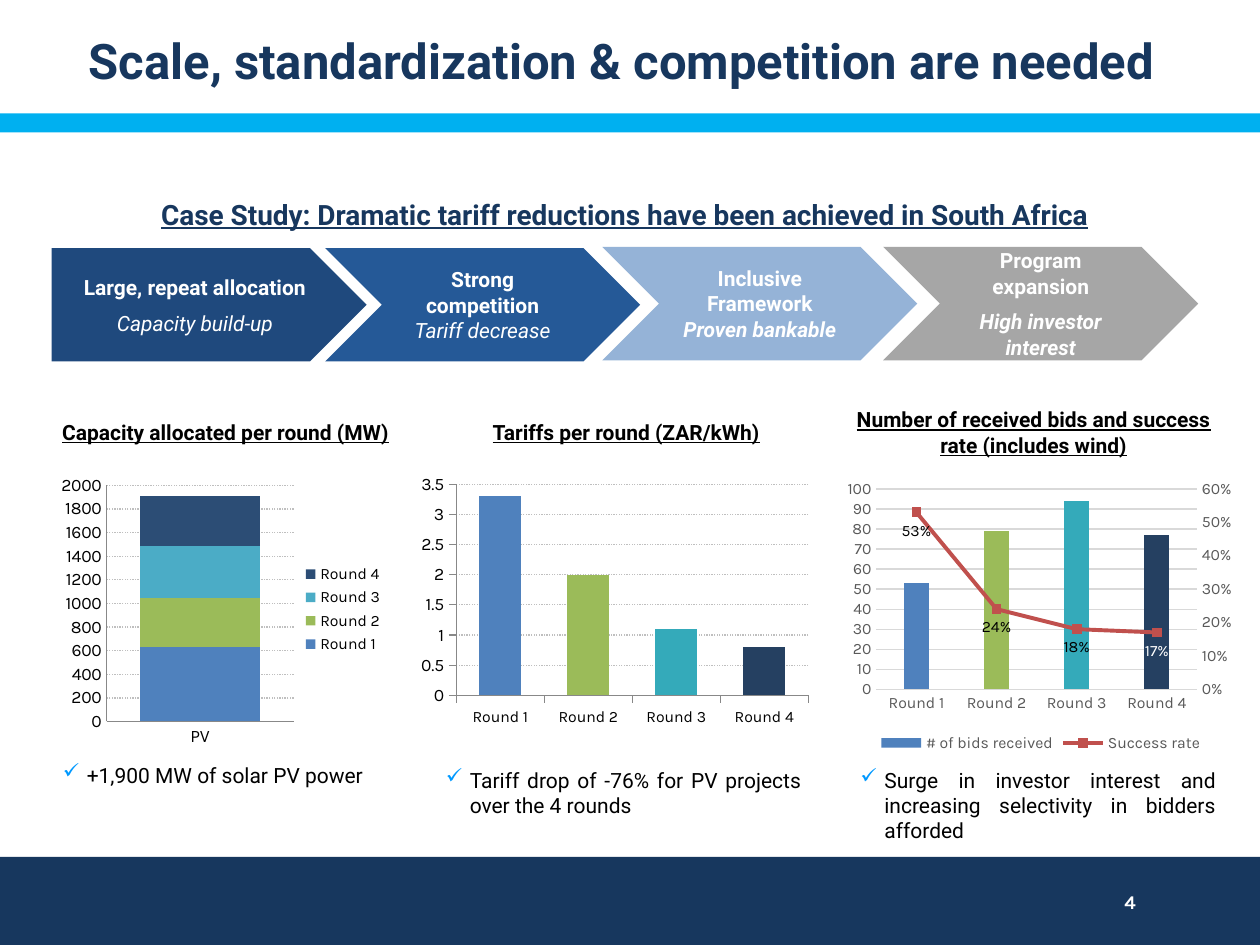
from copy import deepcopy
from pptx import Presentation
from pptx.chart.axis import CategoryAxis, ValueAxis
from pptx.chart.data import CategoryChartData
from pptx.dml.color import RGBColor
from pptx.enum.chart import XL_CHART_TYPE, XL_LABEL_POSITION, XL_LEGEND_POSITION, XL_MARKER_STYLE, XL_TICK_MARK
from pptx.enum.dml import MSO_LINE
from pptx.enum.shapes import MSO_SHAPE
from pptx.enum.text import MSO_ANCHOR, PP_ALIGN
from pptx.oxml import parse_xml
from pptx.oxml.ns import nsdecls, qn
from pptx.util import Pt

COLORS = {
    "navy": "17375E", "sky": "00B0F0", "white": "FFFFFF", "black": "000000", "check": "0099FF",
    "axis": "888888", "dots": "BFBFBF", "pale": "D9D9D9", "gray": "595959", "blue": "4F81BD",
    "green": "9BBB59", "aqua": "4BACC6", "deep": "2C4D75", "teal": "34AABA", "dark": "254061",
    "red": "C0504D", "marker": "C00000", "step1": "1F497D", "step2": "255997", "step3": "95B3D7",
    "step4": "A6A6A6"}
ROUNDS = ["Round 1", "Round 2", "Round 3", "Round 4"]

def style_font(font, size, color, name="Roboto", bold=False, italic=False, underline=False):
    """Format a font."""
    font.name, font.size, font.color.rgb = name, Pt(size), RGBColor.from_string(COLORS[color])
    font.bold, font.italic, font.underline = bold, italic, underline

def fill_solid(fill, color):
    """Give a fill one colour."""
    fill.solid()
    fill.fore_color.rgb = RGBColor.from_string(COLORS[color])

def style_line(line, color, width=0.75):
    """Give a line a colour and width."""
    fill_solid(line.fill, color)
    line.width = Pt(width)

def add_run(paragraph, text, size, color, align=PP_ALIGN.CENTER, **style):
    """Append one formatted run to an aligned paragraph."""
    paragraph.alignment = align
    run = paragraph.add_run()
    run.text = text
    style_font(run.font, size, color, **style)

def add_label(slide, box, text, size, color, anchor=MSO_ANCHOR.TOP, **style):
    """Place one centred text in the box."""
    frame = slide.shapes.add_textbox(*map(Pt, box)).text_frame
    frame.word_wrap, frame.vertical_anchor = True, anchor
    add_run(frame.paragraphs[0], text, size, color, **style)

def add_block(slide, box, color, kind=MSO_SHAPE.RECTANGLE):
    """Place a plain filled shape in the box."""
    block = slide.shapes.add_shape(kind, *map(Pt, box))
    block.shadow.inherit = False
    fill_solid(block.fill, color)
    block.line.fill.background()
    return block

def add_title(slide, box, text):
    """Move and fill the title placeholder."""
    title = slide.shapes.title
    title.left, title.top, title.width, title.height = map(Pt, box)
    title.text_frame.vertical_anchor = MSO_ANCHOR.MIDDLE
    add_run(title.text_frame.paragraphs[0], text, 28, "navy", bold=True)

def add_step(slide, box, kind, color, name, result, bold_result, split):
    """Place one arrow of the process with its name and result."""
    frame = add_block(slide, box, color, kind).text_frame
    frame.word_wrap, frame.vertical_anchor = True, MSO_ANCHOR.MIDDLE
    paragraph = frame.paragraphs[0]
    add_run(paragraph, name, 12, "white", bold=True)
    if split:
        paragraph = frame.add_paragraph()
        paragraph.space_before = Pt(6)
    else:
        paragraph.add_line_break()
    add_run(paragraph, result, 12, "white", bold=bold_result, italic=True)

def add_finding(slide, box, text):
    """Place one justified finding with a check mark."""
    frame = slide.shapes.add_textbox(*map(Pt, box)).text_frame
    frame.word_wrap = True
    finding = frame.paragraphs[0]
    finding.space_after = Pt(6)
    properties = finding._p.get_or_add_pPr()
    properties.set("marL", str(Pt(13.7)))
    properties.set("indent", str(Pt(-13.7)))
    for bullet in (f'buClr {nsdecls("a")}><a:srgbClr val="{COLORS["check"]}"/></a:buClr>',
                   f'buChar {nsdecls("a")} char="✓"/>'):
        properties.append(parse_xml("<a:" + bullet))
    add_run(finding, text, 12, "black", PP_ALIGN.JUSTIFY)

def add_column_chart(slide, box, kind, categories, series, gap, overlap, plot_area):
    """Place a column chart whose plot fills the given share of the box."""
    data = CategoryChartData()
    data.categories = categories
    for name, values, number_format in series:
        data.add_series(name, values, number_format)
    chart = slide.shapes.add_chart(kind, *map(Pt, box), data).chart
    chart.has_title = chart.has_legend = False
    style_font(chart.font, 10, "black", "Karla")
    plot = chart.plots[0]
    plot.gap_width, plot.overlap, plot.vary_by_categories = gap, overlap, False
    area = chart._chartSpace.chart.plotArea
    for layout in area.findall(qn("c:layout")):
        area.remove(layout)
    shares = "".join(f'<c:{key} val="{share}"/>' for key, share in zip("xywh", plot_area))
    area.insert(0, parse_xml(
        f'<c:layout {nsdecls("c")}><c:manualLayout><c:layoutTarget val="inner"/>'
        f'<c:xMode val="edge"/><c:yMode val="edge"/>{shares}</c:manualLayout></c:layout>'))
    return chart

def style_axes(chart, sizes, color, lines, tick, top, step, grid, dash=None):
    """Format both axes, the value range and the gridlines."""
    for axis, size, line in zip((chart.category_axis, chart.value_axis), sizes, lines):
        axis.major_tick_mark, axis.minor_tick_mark = tick, XL_TICK_MARK.NONE
        style_font(axis.tick_labels.font, size, color, "Karla")
        if line:
            style_line(axis.format.line, line)
        else:
            axis.format.line.fill.background()
    scale = chart.value_axis
    scale.minimum_scale, scale.maximum_scale, scale.major_unit = 0, top, step
    style_line(scale.major_gridlines.format.line, grid)
    scale.major_gridlines.format.line.dash_style = dash

def color_rounds(series):
    """Give the column of each round its colour."""
    fill_solid(series.format.fill, "blue")
    for index, color in enumerate(["green", "teal", "dark"], 1):
        fill_solid(series.points[index].format.fill, color)

def add_legend(chart, position, color):
    """Show the chart legend."""
    chart.has_legend = True
    chart.legend.position, chart.legend.include_in_layout = position, False
    style_font(chart.legend.font, 9, color, "Karla")

def add_capacity_chart(slide, box):
    """Place the stacked capacity of all rounds."""
    series = [(name, [mw], "General") for name, mw in zip(ROUNDS, [630, 420, 440, 420])]
    chart = add_column_chart(slide, box, XL_CHART_TYPE.COLUMN_STACKED, ["PV"], series, 55, 100, (0.15, 0.06, 0.55, 0.84))
    for part, color in zip(chart.series, ["blue", "green", "aqua", "deep"]):
        fill_solid(part.format.fill, color)
    style_axes(chart, (10, 10), "black", ("axis", "axis"), XL_TICK_MARK.NONE, 2000, 200, "dots", MSO_LINE.ROUND_DOT)
    add_legend(chart, XL_LEGEND_POSITION.RIGHT, "black")

def add_tariff_chart(slide, box):
    """Place the tariff of each round."""
    series = [("Series 1", [3.3, 2, 1.1, 0.8], "General")]
    chart = add_column_chart(slide, box, XL_CHART_TYPE.COLUMN_CLUSTERED, ROUNDS, series, 110, -31, (0.11, 0.05, 0.87, 0.81))
    color_rounds(chart.series[0])
    style_axes(chart, (9, 10), "black", ("axis", "axis"), XL_TICK_MARK.OUTSIDE, 3.5, 0.5, "dots", MSO_LINE.ROUND_DOT)

def move_to_right_axis(area):
    """Turn the second column series of a plot area into a line on a right axis."""
    bars, left, bottom = (area.find(qn(f"c:{tag}")) for tag in ("barChart", "valAx", "catAx"))
    rate = bars.findall(qn("c:ser"))[1]
    for flag in rate.findall(qn("c:invertIfNegative")):
        rate.remove(flag)
    lines = parse_xml(f'<c:lineChart {nsdecls("c")}><c:grouping val="standard"/><c:varyColors val="0"/>'
                      '<c:marker val="1"/><c:axId val="5001"/><c:axId val="5002"/></c:lineChart>')
    lines.insert(2, rate)
    bars.addnext(lines)
    right, hidden = deepcopy(left), deepcopy(bottom)
    for axis, own, other in ((right, "5002", "5001"), (hidden, "5001", "5002")):
        axis.find(qn("c:axId")).set("val", own)
        axis.find(qn("c:crossAx")).set("val", other)
        left.addnext(axis)
    right.find(qn("c:axPos")).set("val", "r")
    right.find(qn("c:crosses")).set("val", "max")
    CategoryAxis(hidden).visible = False
    scale = ValueAxis(right)
    scale.has_major_gridlines, scale.maximum_scale, scale.major_unit = False, 0.6, 0.1
    scale.tick_labels.number_format, scale.tick_labels.number_format_is_linked = "0%", False

def add_bids_chart(slide, box):
    """Place the bids of each round with the success rate."""
    series = [("# of bids received", [53, 79, 94, 77], "0"), ("Success rate", [0.53, 0.24, 0.18, 0.17], "0%")]
    chart = add_column_chart(slide, box, XL_CHART_TYPE.COLUMN_CLUSTERED, ROUNDS, series, 219, -27, (0.09, 0.05, 0.8, 0.71))
    color_rounds(chart.plots[0].series[0])
    style_axes(chart, (9, 9), "gray", ("pale", None), XL_TICK_MARK.NONE, 100, 10, "pale")
    move_to_right_axis(chart._chartSpace.chart.plotArea)
    rate = chart.plots[1].series[0]
    rate.smooth = False
    style_line(rate.format.line, "red", 2.25)
    rate.marker.style, rate.marker.size = XL_MARKER_STYLE.SQUARE, 5
    fill_solid(rate.marker.format.fill, "marker")
    style_line(rate.marker.format.line, "red")
    labels, last = rate.data_labels, rate.points[3].data_label
    labels.show_value, labels.number_format, labels.number_format_is_linked = True, "0%", False
    for label, color in ((labels, "black"), (last, "white")):
        style_font(label.font, 9, color, "Karla")
        label.position = XL_LABEL_POSITION.BELOW
    add_legend(chart, XL_LEGEND_POSITION.BOTTOM, "gray")

def main():
    """Build the slide."""
    deck = Presentation()
    deck.slide_width, deck.slide_height = Pt(720), Pt(540)
    slide = deck.slides.add_slide(deck.slide_layouts[5])
    add_block(slide, (0, 489.6, 720, 50.4), "navy")
    add_label(slide, (571.7, 505.4, 148.3, 22.3), "4", 11, "white", name="Karla", bold=True)
    add_title(slide, (13, 12.2, 684, 44.6), "Scale, standardization & competition are needed")
    add_block(slide, (0, 64.8, 720, 10.8), "sky")
    add_label(slide, (49, 104.4, 616, 36), "Case Study: Dramatic tariff reductions have been achieved in South Africa",
              16, "navy", MSO_ANCHOR.MIDDLE, bold=True, underline=True)
    for left, top, *step in (
            (29.5, 141.8, MSO_SHAPE.PENTAGON, "step1", "Large, repeat allocation", "Capacity build-up", False, True),
            (185.8, 141.8, MSO_SHAPE.CHEVRON, "step2", "Strong competition", "Tariff decrease", False, False),
            (344.2, 141.1, MSO_SHAPE.CHEVRON, "step3", "Inclusive Framework", "Proven bankable", True, False),
            (504.7, 141.1, MSO_SHAPE.CHEVRON, "step4", "Program expansion", "High investor interest", True, True)):
        add_step(slide, (left, top, 180, 64.8), *step)
    for heading_box, heading, add_chart, chart_box, finding_box, finding in (
            ((-12.2, 236.2, 282.2, 21.6), "Capacity allocated per round (MW)", add_capacity_chart,
             (31.7, 267.8, 194.4, 160.6), (28.8, 432, 186.5, 85), "+1,900 MW of solar PV power"),
            ((216.7, 236.2, 282.2, 21.6), "Tariffs per round (ZAR/kWh)", add_tariff_chart,
             (235.4, 269.3, 231.1, 149), (247.7, 434.9, 217.4, 85), "Tariff drop of -76% for PV projects over the 4 rounds"),
            ((480.2, 229, 221, 36), "Number of received bids and success rate (includes wind)", add_bids_chart,
             (480.2, 271.4, 229, 161.3), (484.6, 434.9, 217.4, 85),
             "Surge in investor interest and increasing selectivity in bidders afforded")):
        add_label(slide, heading_box, heading, 12, "black", bold=True, underline=True)
        add_chart(slide, chart_box)
        add_finding(slide, finding_box, finding)
    deck.save("out.pptx")

if __name__ == "__main__":
    main()
